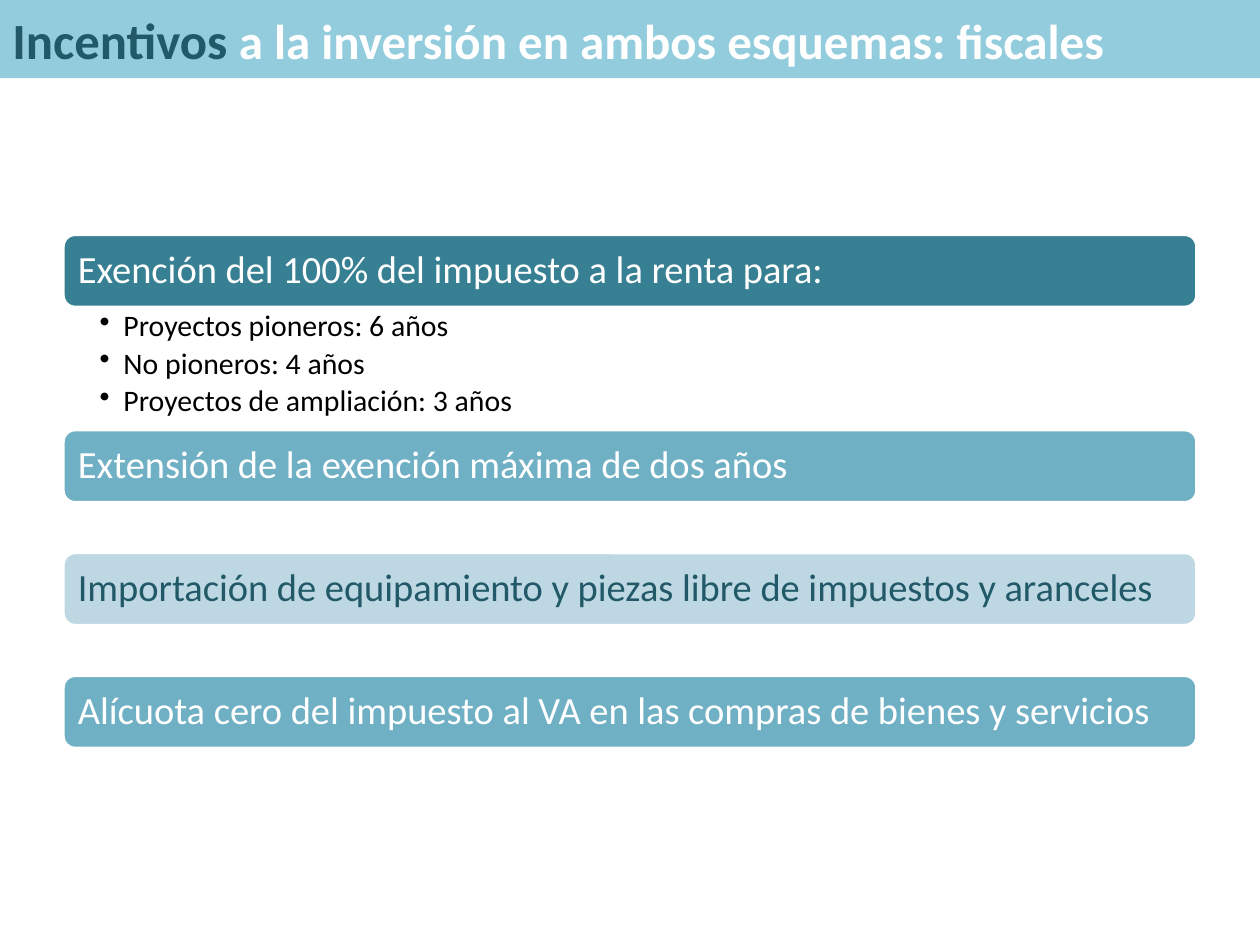
from dataclasses import dataclass

from lxml import etree
from pptx import Presentation
from pptx.dml.color import RGBColor
from pptx.enum.shapes import MSO_SHAPE
from pptx.enum.text import MSO_ANCHOR, PP_ALIGN
from pptx.oxml.ns import qn
from pptx.util import Inches, Pt


@dataclass(frozen=True)
class Theme:
    font: str = "Calibri"
    white: RGBColor = RGBColor(0xFF, 0xFF, 0xFF)
    black: RGBColor = RGBColor(0, 0, 0)
    ink: RGBColor = RGBColor(0x21, 0x59, 0x68)
    banner: RGBColor = RGBColor(0x93, 0xCD, 0xDD)
    dark: RGBColor = RGBColor(0x37, 0x7F, 0x92)
    medium: RGBColor = RGBColor(0x70, 0xB0, 0xC5)
    light: RGBColor = RGBColor(0xBE, 0xD8, 0xE3)
    title_lead: Pt = Pt(29)
    title: Pt = Pt(28)
    heading: Pt = Pt(22)
    detail: Pt = Pt(17)


theme = Theme()


def add_bar(kind, left, top, width, height, fill):
    bar = slide.shapes.add_shape(
        kind, Inches(left), Inches(top), Inches(width), Inches(height))
    bar.shadow.inherit = False
    bar.fill.solid()
    bar.fill.fore_color.rgb = fill
    bar.text_frame.vertical_anchor = MSO_ANCHOR.MIDDLE
    bar.text_frame.paragraphs[0].alignment = PP_ALIGN.LEFT
    return bar


def style(paragraph, size, color):
    paragraph.line_spacing = 0.9
    paragraph.font.name = theme.font
    paragraph.font.size = size
    paragraph.font.color.rgb = color


prs = Presentation()
prs.slide_width, prs.slide_height = Inches(10), Inches(7.5)
slide = prs.slides.add_slide(prs.slide_layouts[6])

# Incentive bars
bar_left, bar_width, bar_height = 0.5, 9, 0.58
first_top, second_top, pitch = 1.86, 3.41, 0.975
incentives = [
    (first_top, "Exención del 100% del impuesto a la renta para:",
     theme.dark, theme.white),
    (second_top, "Extensión de la exención máxima de dos años",
     theme.medium, theme.white),
    (second_top + pitch,
     "Importación de equipamiento y piezas libre de impuestos y aranceles",
     theme.light, theme.ink),
    (second_top + 2 * pitch,
     "Alícuota cero del impuesto al VA en las compras de bienes y servicios",
     theme.medium, theme.white),
]
for top, wording, fill, color in incentives:
    incentive = add_bar(MSO_SHAPE.ROUNDED_RECTANGLE,
                        bar_left, top, bar_width, bar_height, fill)
    incentive.line.color.rgb = theme.white
    incentive.line.width = Pt(2)
    frame = incentive.text_frame
    frame.margin_left = frame.margin_right = Inches(0.09)
    heading = frame.paragraphs[0]
    heading.text = wording
    style(heading, theme.heading, color)

# Exemption periods under the first bar
periods_top = first_top + bar_height
periods = slide.shapes.add_textbox(
    Inches(bar_left), Inches(periods_top),
    Inches(bar_width), Inches(second_top - periods_top)).text_frame
periods.word_wrap = True
periods.margin_left, periods.margin_right = Inches(0.29), Inches(0.17)
periods.margin_top = periods.margin_bottom = Inches(0.03)
for index, wording in enumerate(["Proyectos pioneros: 6 años",
                                 "No pioneros: 4 años",
                                 "Proyectos de ampliación: 3 años"]):
    period = periods.add_paragraph() if index else periods.paragraphs[0]
    period.text = wording
    period.level = 1
    period.space_after = Pt(3)
    style(period, theme.detail, theme.black)
    properties = period._p.get_or_add_pPr()
    properties.set("marL", str(Inches(0.19)))
    properties.set("indent", str(Inches(-0.19)))
    bullet = etree.Element(qn("a:buChar"), char="•")
    properties.find(qn("a:defRPr")).addprevious(bullet)

# Title banner
banner = add_bar(MSO_SHAPE.RECTANGLE, 0, 0, 10, 0.62, theme.banner)
banner.line.fill.background()
title = banner.text_frame.paragraphs[0]
title.font.name = theme.font
title.font.bold = True
for wording, size, color in [
    ("Incentivos", theme.title_lead, theme.ink),
    (" a la inversión en ambos esquemas: fiscales", theme.title, theme.white),
]:
    run = title.add_run()
    run.text = wording
    run.font.size = size
    run.font.color.rgb = color

prs.save("out.pptx")
